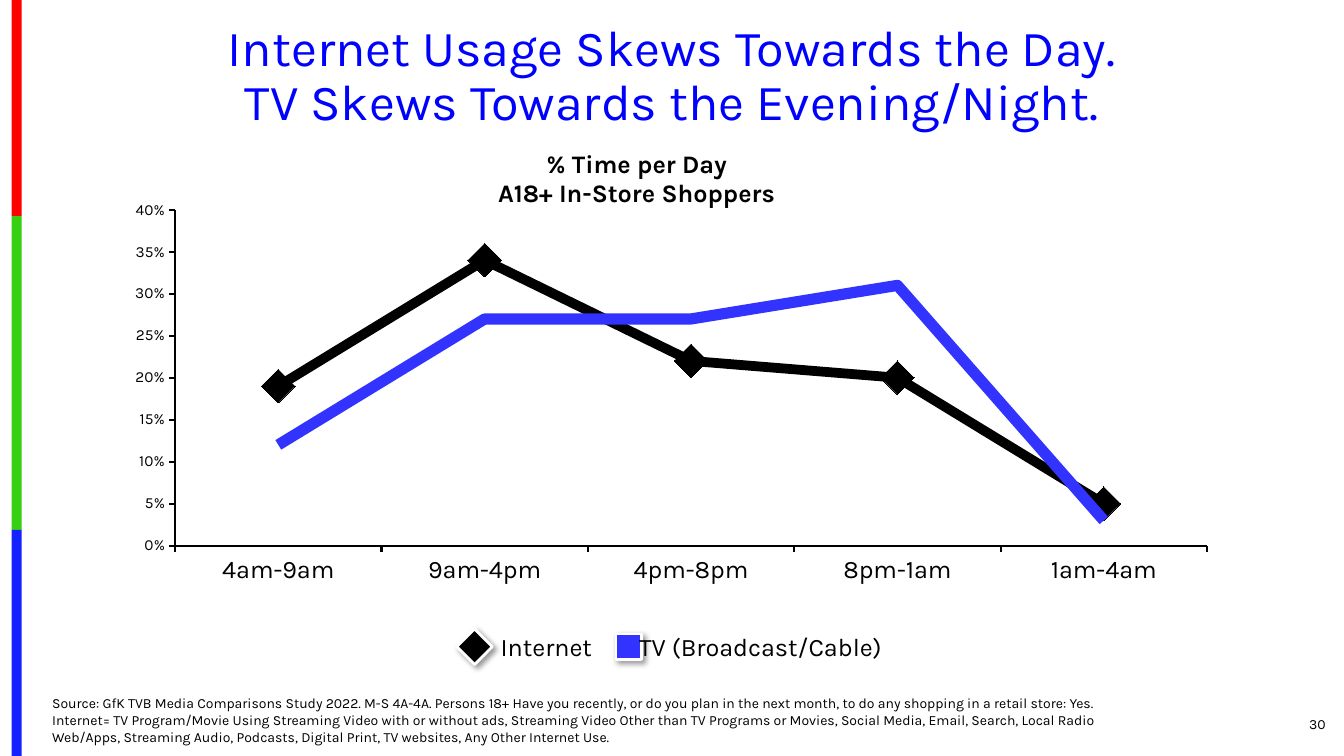
from lxml.etree import SubElement
from pptx import Presentation
from pptx.chart.data import CategoryChartData
from pptx.dml.color import RGBColor
from pptx.enum.chart import XL_CHART_TYPE, XL_MARKER_STYLE, XL_TICK_MARK
from pptx.enum.shapes import MSO_SHAPE
from pptx.enum.text import MSO_ANCHOR, PP_ALIGN
from pptx.oxml import parse_xml
from pptx.oxml.ns import nsdecls, qn
from pptx.util import Pt

FONT = "Karla"
BLACK = RGBColor(0x00, 0x00, 0x00)
WHITE = RGBColor(0xFF, 0xFF, 0xFF)
TITLE_BLUE = RGBColor(0x00, 0x00, 0xFF)
TV_BLUE = RGBColor(0x33, 0x33, 0xFF)
STRIPE_RED = RGBColor(0xFE, 0x00, 0x00)
STRIPE_GREEN = RGBColor(0x36, 0xCF, 0x12)
STRIPE_BLUE = RGBColor(0x13, 0x22, 0xFE)

DAYPARTS = ["4am-9am", "9am-4pm", "4pm-8pm", "8pm-1am", "1am-4am"]
INTERNET = [0.19, 0.34, 0.22, 0.20, 0.05]
TV = [0.12, 0.27, 0.27, 0.31, 0.03]
SOURCE = (
    "Source: GfK TVB Media Comparisons Study 2022.\u00a0M-S 4A-4A. Persons 18+ Have you "
    "recently, or do you plan in the next month, to do any shopping in a retail store: Yes. "
    "Internet= TV Program/Movie Using Streaming Video with or without ads, Streaming Video "
    "Other than TV Programs or Movies, Social Media, Email, Search, Local Radio Web/Apps, "
    "Streaming Audio, Podcasts, Digital Print, TV websites, Any Other Internet Use."
)


def style_font(font, size, color=BLACK, bold=False):
    font.name = FONT
    font.size = Pt(size)
    font.bold = bold
    font.color.rgb = color


def add_text(slide, box, text, size, color=BLACK, align=PP_ALIGN.LEFT,
             anchor=MSO_ANCHOR.MIDDLE, wrap=True, spacing=1.0):
    frame = slide.shapes.add_textbox(*map(Pt, box)).text_frame
    frame.word_wrap = wrap
    frame.vertical_anchor = anchor
    paragraph = frame.paragraphs[0]
    paragraph.text = text
    paragraph.alignment = align
    paragraph.line_spacing = spacing
    for run in paragraph.runs:
        style_font(run.font, size, color)


def add_stripe(slide, box):
    left, top, width, height = box
    for color, share in ((STRIPE_RED, 154.5), (STRIPE_GREEN, 224), (STRIPE_BLUE, 161.5)):
        band_height = height * share / 540
        band = slide.shapes.add_shape(
            MSO_SHAPE.RECTANGLE, Pt(left), Pt(top), Pt(width), Pt(band_height))
        band.shadow.inherit = False
        band.fill.solid()
        band.fill.fore_color.rgb = color
        band.line.fill.background()
        top += band_height


def set_layout(parent, index, fractions, inner=False):
    for old_layout in parent.findall(qn("c:layout")):
        parent.remove(old_layout)
    layout = parse_xml(f"<c:layout {nsdecls('c')}><c:manualLayout/></c:layout>")
    manual = layout[0]
    if inner:
        SubElement(manual, qn("c:layoutTarget")).set("val", "inner")
    for axis in "xy":
        SubElement(manual, qn(f"c:{axis}Mode")).set("val", "edge")
    for side, fraction in zip("xywh", fractions):
        SubElement(manual, qn(f"c:{side}")).set("val", str(fraction))
    parent.insert(index, layout)


def style_axis(axis, size):
    axis.has_major_gridlines = False
    axis.major_tick_mark = XL_TICK_MARK.OUTSIDE
    axis.minor_tick_mark = XL_TICK_MARK.NONE
    axis.format.line.color.rgb = BLACK
    axis.format.line.width = Pt(1.5)
    style_font(axis.tick_labels.font, size)


def add_usage_chart(slide, box):
    usage = CategoryChartData(number_format="0%")
    usage.categories = DAYPARTS
    usage.add_series("Internet", INTERNET)
    usage.add_series("TV (Broadcast/Cable)", TV)
    chart = slide.shapes.add_chart(
        XL_CHART_TYPE.LINE_MARKERS, *map(Pt, box), usage).chart
    chart.has_legend = False
    style_font(chart.font, 10)

    chart.has_title = True
    heading = chart.chart_title.text_frame
    heading.text = "% Time per Day\nA18+ In-Store Shoppers"
    for paragraph in heading.paragraphs:
        style_font(paragraph.runs[0].font, 18, bold=True)
    chart.chart_title.include_in_layout = False
    set_layout(heading._txBody.getparent().getparent(), 1, (0.338, 0.048))

    style_axis(chart.category_axis, 18)
    percent_axis = chart.value_axis
    style_axis(percent_axis, 11)
    percent_axis.minimum_scale = 0
    percent_axis.maximum_scale = 0.4
    percent_axis.major_unit = 0.05
    percent_axis.tick_labels.number_format = "0%"
    percent_axis.tick_labels.number_format_is_linked = False

    plot = chart.plots[0]
    plot.vary_by_categories = False
    for series, color, width in zip(plot.series, (BLACK, TV_BLUE), (7, 8)):
        series.smooth = False
        series.format.line.color.rgb = color
        series.format.line.width = Pt(width)
        series.marker.style = XL_MARKER_STYLE.NONE
    internet_marker = plot.series[0].marker
    internet_marker.style = XL_MARKER_STYLE.DIAMOND
    internet_marker.size = 24
    internet_marker.format.fill.solid()
    internet_marker.format.fill.fore_color.rgb = BLACK
    internet_marker.format.line.color.rgb = BLACK
    set_layout(chart._chartSpace.chart.plotArea, 0, (0.045, 0.163, 0.945, 0.595), inner=True)


def add_legend_entry(slide, box, label, color, rotation, label_offset):
    left, top, width, height = box
    side = 18
    key = slide.shapes.add_shape(
        MSO_SHAPE.RECTANGLE, Pt(left), Pt(top + (height - side) / 2), Pt(side), Pt(side))
    key.rotation = rotation
    key.fill.solid()
    key.fill.fore_color.rgb = color
    key.line.color.rgb = WHITE
    key.line.width = Pt(2)
    key._element.spPr.append(parse_xml(
        f"<a:effectLst {nsdecls('a')}>"
        f'<a:outerShdw blurRad="{Pt(4)}" dist="{Pt(3)}" dir="2700000" rotWithShape="0">'
        '<a:srgbClr val="000000"><a:alpha val="40000"/></a:srgbClr>'
        "</a:outerShdw></a:effectLst>"))
    add_text(slide, (left + label_offset, top, width - label_offset, height),
             label, 18, wrap=False)


def add_legend(slide, box):
    left, top, width, height = box
    tv_offset = 110
    add_legend_entry(slide, (left, top, tv_offset, height), "Internet", BLACK, 45, 20.5)
    add_legend_entry(slide, (left + tv_offset, top, width - tv_offset, height),
                     "TV (Broadcast/Cable)", TV_BLUE, 0, 9.5)


def main():
    deck = Presentation()
    deck.slide_width, deck.slide_height = Pt(960), Pt(540)
    slide = deck.slides.add_slide(deck.slide_layouts[6])
    add_stripe(slide, (8.3, 0, 7.2, 540))
    add_text(slide, (33, 12.2, 894, 85.7),
             "Internet Usage Skews Towards the Day.\vTV Skews Towards the Evening/Night.",
             36, TITLE_BLUE, PP_ALIGN.CENTER, spacing=0.9)
    add_text(slide, (876, 502.6, 78, 28.8), "30", 10, align=PP_ALIGN.RIGHT)
    add_text(slide, (30.2, 491.8, 780, 43.9), SOURCE, 10, anchor=MSO_ANCHOR.BOTTOM)
    add_usage_chart(slide, (90, 84.2, 780, 403.2))
    add_legend(slide, (330, 447.5, 314, 28.8))
    deck.save("out.pptx")


if __name__ == "__main__":
    main()
